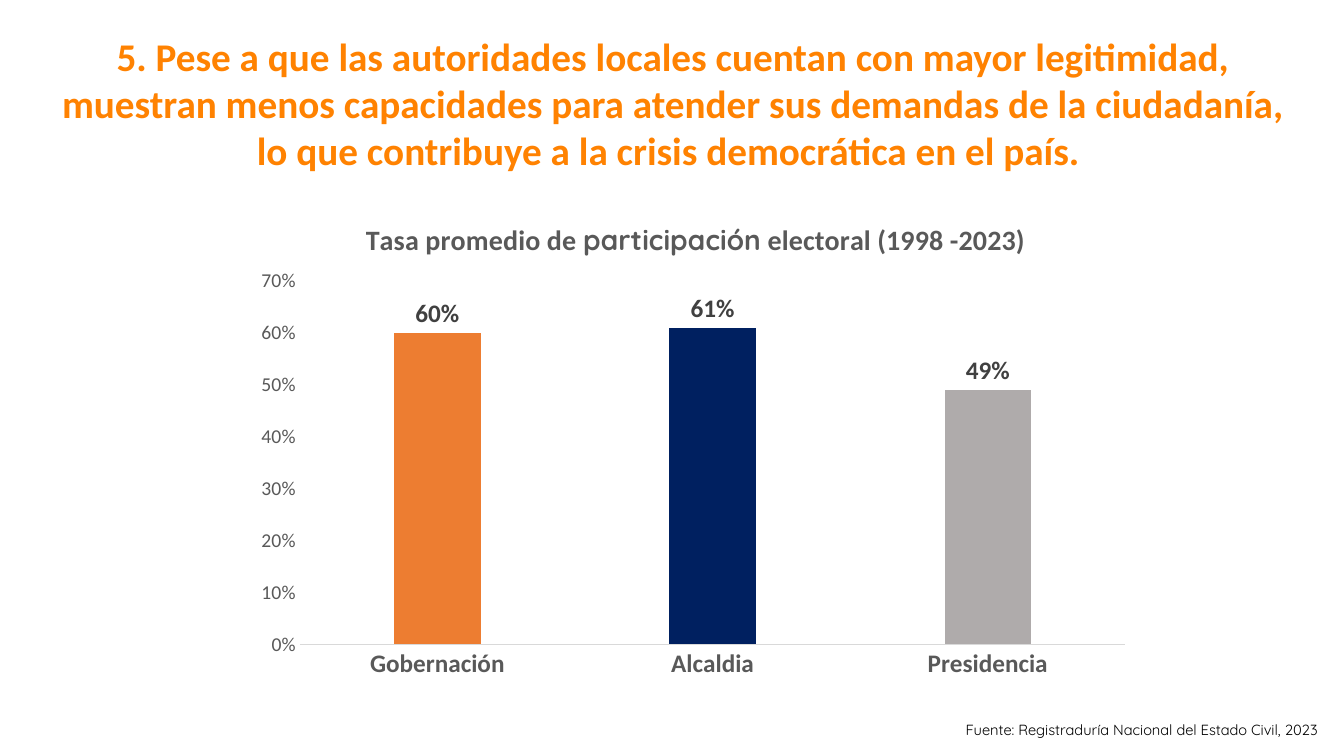
from dataclasses import dataclass

from lxml import etree
from pptx import Presentation
from pptx import util as u
from pptx.chart.data import CategoryChartData
from pptx.dml.color import RGBColor
from pptx.enum import chart as ch, text
from pptx.oxml.ns import qn


@dataclass(frozen=True)
class Theme:
    body_font: str = "Calibri"
    accent_font: str = "Quicksand"
    heading: str = "FF8201"
    ink: str = "000000"
    muted: str = "595959"
    label: str = "404040"
    axis: str = "D9D9D9"
    series: str = "4472C4"
    bars: tuple = ("ED7D31", "002060", "AFABAB")
    heading_size: float = 28
    chart_title_size: float = 20
    label_size: float = 18
    tick_size: float = 14
    source_size: float = 10.5


THEME = Theme()
HEADING = ("5. Pese a que las autoridades locales cuentan con mayor legitimidad, "
           "muestran menos capacidades para atender sus demandas de la ciudadanía, "
           "lo que contribuye a la crisis democrática en el país. ")
SOURCE = "Fuente: Registraduría Nacional del Estado Civil, 2023"
CHART_TITLE = (("Tasa promedio de ", THEME.body_font),
               ("participación", THEME.accent_font),
               (" electoral (1998 -2023)", THEME.body_font))
TURNOUT = {"Gobernación": 0.60, "Alcaldia": 0.61, "Presidencia": 0.49}


def style(font, size, color, bold=False, name=THEME.body_font):
    font.name = name
    font.size = u.Pt(size)
    font.bold = bold
    font.color.rgb = RGBColor.from_string(color)


def fill(fmt, color):
    fmt.fill.solid()
    fmt.fill.fore_color.rgb = RGBColor.from_string(color)


def set_layout(parent, index, **values):
    """Place a chart part by fractions of the chart's size."""
    for old in parent.findall(qn("c:layout")):
        parent.remove(old)
    layout = etree.Element(qn("c:layout"))
    manual = etree.SubElement(layout, qn("c:manualLayout"))
    for tag, val in values.items():
        etree.SubElement(manual, qn(f"c:{tag}")).set("val", str(val))
    parent.insert(index, layout)


def add_heading(slide):
    sp = slide.shapes.title
    sp.left, sp.top = u.Inches(0.34), u.Inches(0.27)
    sp.width, sp.height = u.Inches(12.66), u.Inches(1.82)
    tf = sp.text_frame
    tf.text = HEADING
    tf.word_wrap = True
    tf.auto_size = text.MSO_AUTO_SIZE.NONE
    tf.vertical_anchor = text.MSO_ANCHOR.TOP
    p = tf.paragraphs[0]
    p.alignment = text.PP_ALIGN.CENTER
    style(p.runs[0].font, THEME.heading_size, THEME.heading, bold=True)


def add_source(slide):
    sp = slide.shapes.add_textbox(u.Inches(9.48), u.Inches(7.1), u.Inches(3.72), u.Inches(0.28))
    tf = sp.text_frame
    tf.text = SOURCE
    tf.word_wrap = False
    tf.auto_size = text.MSO_AUTO_SIZE.SHAPE_TO_FIT_TEXT
    style(tf.paragraphs[0].runs[0].font, THEME.source_size, THEME.ink, name=THEME.accent_font)


def title_chart(chart):
    chart.has_title = True
    title = chart.chart_title
    title.include_in_layout = False
    p = title.text_frame.paragraphs[0]
    for words, font_name in CHART_TITLE:
        r = p.add_run()
        r.text = words
        style(r.font, THEME.chart_title_size, THEME.muted, bold=True, name=font_name)
    set_layout(title._element, 1, xMode="edge", yMode="edge", x=0.13, y=0.04)


def format_axes(chart):
    cat, val = chart.category_axis, chart.value_axis
    for axis in (cat, val):
        axis.has_major_gridlines = False
        axis.major_tick_mark = axis.minor_tick_mark = ch.XL_TICK_MARK.NONE
    style(cat.tick_labels.font, THEME.label_size, THEME.muted, bold=True)
    cat.format.line.color.rgb = RGBColor.from_string(THEME.axis)
    cat.format.line.width = u.Pt(0.75)
    style(val.tick_labels.font, THEME.tick_size, THEME.muted)
    val.format.line.fill.background()
    val.tick_labels.number_format = "0%"
    val.tick_labels.number_format_is_linked = False
    val.minimum_scale, val.maximum_scale, val.major_unit = 0, 0.7, 0.1


def format_bars(plot):
    plot.gap_width, plot.overlap = 219, -27
    plot.vary_by_categories = False
    series = plot.series[0]
    fill(series.format, THEME.series)
    for i, color in enumerate(THEME.bars):
        fill(series.points[i].format, color)
    labels = series.data_labels
    labels.show_value = True
    labels.position = ch.XL_LABEL_POSITION.OUTSIDE_END
    labels.number_format = "0%"
    labels.number_format_is_linked = False
    style(labels.font, THEME.label_size, THEME.label, bold=True)


def add_turnout_chart(slide):
    data = CategoryChartData(number_format="0%")
    data.categories = list(TURNOUT)
    data.add_series("Series 1", list(TURNOUT.values()))
    frame = slide.shapes.add_chart(ch.XL_CHART_TYPE.COLUMN_CLUSTERED, u.Inches(2.44),
                                   u.Inches(1.96), u.Inches(8.9), u.Inches(4.87), data)
    chart = frame.chart
    chart.has_legend = False
    style(chart.font, 10, THEME.ink)
    title_chart(chart)
    format_axes(chart)
    format_bars(chart.plots[0])
    set_layout(chart._chartSpace.chart.plotArea, 0, layoutTarget="inner", xMode="edge",
               yMode="edge", x=0.06, y=0.17, w=0.92, h=0.74)


def main():
    prs = Presentation()
    prs.slide_width, prs.slide_height = u.Inches(13.33), u.Inches(7.5)
    slide = prs.slides.add_slide(prs.slide_layouts.get_by_name("Title Only"))
    add_turnout_chart(slide)
    add_heading(slide)
    add_source(slide)
    prs.save("out.pptx")


if __name__ == "__main__":
    main()
